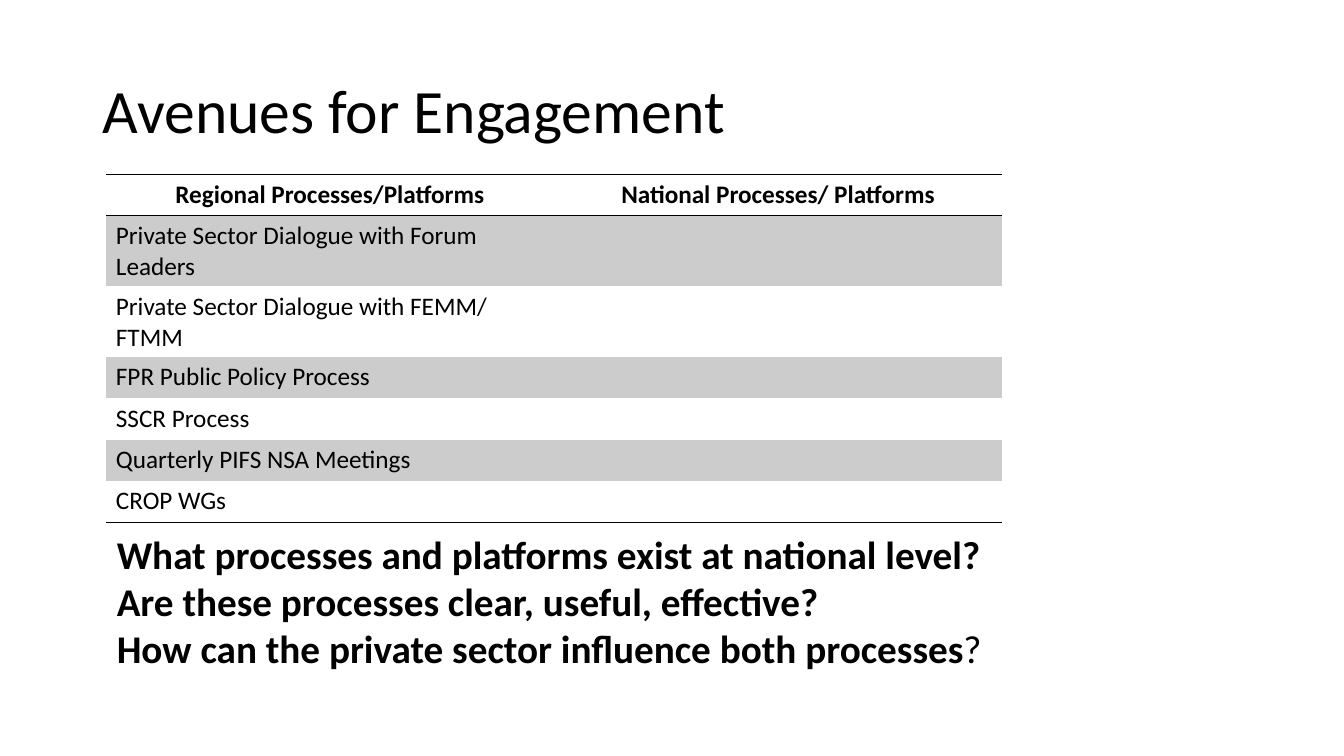
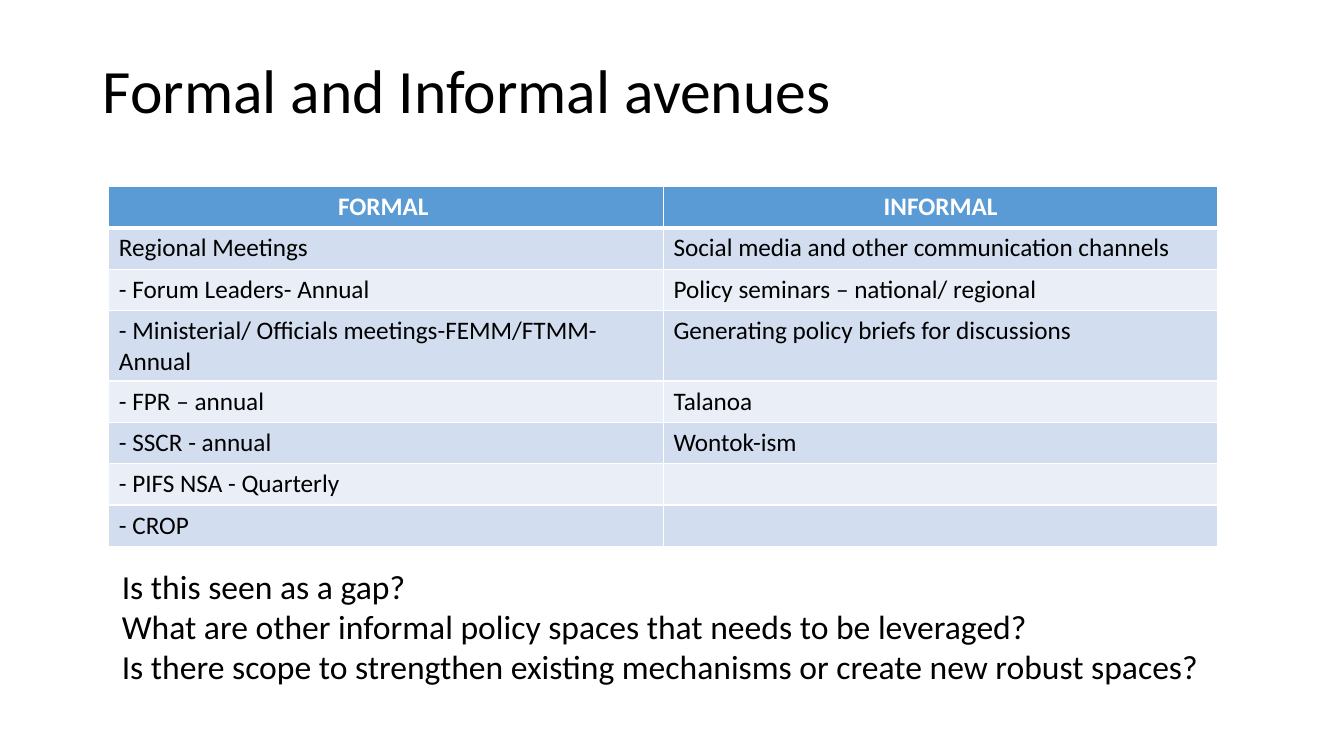
from lxml import etree
from pptx import Presentation
from pptx import util as u
from pptx.dml.color import RGBColor
from pptx.enum import text
from pptx.oxml import ns

COLOURS = {
    "ink": "000000",
    "paper": "FFFFFF",
    "grey": "CCCCCC",
    "blue": "5B9BD5",
    "blue band": "D2DEEF",
    "pale band": "EAEFF7",
}
FONT = "Calibri"
ROW_HEIGHT = 0.41


def colour(name):
    return RGBColor.from_string(COLOURS[name])


def write(paragraph, content, size=18, ink="ink", bold=False, align=None, spacing=None):
    """Add one formatted run to a paragraph."""
    run = paragraph.add_run()
    run.text = content
    run.font.name = FONT
    run.font.size = u.Pt(size)
    run.font.bold = bold
    run.font.color.rgb = colour(ink)
    if align is not None:
        paragraph.alignment = align
    if spacing is not None:
        paragraph.line_spacing = spacing


def set_border(cell, side, rule):
    """Draw a cell edge from (colour, points), or clear it when rule is None."""
    properties = cell._tc.get_or_add_tcPr()
    line = etree.SubElement(properties, ns.qn(f"a:ln{side}"))
    if rule is None:
        line.set("w", "0")
        etree.SubElement(line, ns.qn("a:noFill"))
        return
    name, width = rule
    line.set("w", str(u.Pt(width)))
    fill = etree.SubElement(line, ns.qn("a:solidFill"))
    etree.SubElement(fill, ns.qn("a:srgbClr")).set("val", COLOURS[name])


class Deck:
    def __init__(self):
        self.presentation = Presentation()
        self.presentation.slide_width = u.Inches(13.33)
        self.presentation.slide_height = u.Inches(7.5)
        self.slide = None

    def add_slide(self):
        self.slide = self.presentation.slides.add_slide(self.presentation.slide_layouts[6])

    def text_frame(self, left, top, width, height):
        box = self.slide.shapes.add_textbox(*map(u.Inches, (left, top, width, height)))
        box.text_frame.word_wrap = True
        return box.text_frame

    def title(self, content, top, height):
        frame = self.text_frame(0.92, top, 11.5, height)
        frame.vertical_anchor = text.MSO_ANCHOR.MIDDLE
        write(frame.paragraphs[0], content, size=44, spacing=0.9)

    def questions(self, lines, left, top, width, height, size):
        """Each line is a list of (text, bold) runs."""
        frame = self.text_frame(left, top, width, height)
        for index, runs in enumerate(lines):
            paragraph = frame.add_paragraph() if index else frame.paragraphs[0]
            for content, bold in runs:
                write(paragraph, content, size=size, bold=bold)

    def table(self, rows, left, top, width, header, bands, rules, divider=None):
        """header is (fill, ink); rules holds one horizontal edge more than there are rows."""
        columns = len(rows[0])
        frame = self.slide.shapes.add_table(
            len(rows), columns, u.Inches(left), u.Inches(top),
            u.Inches(width), u.Inches(ROW_HEIGHT * len(rows)))
        for row, values in enumerate(rows):
            is_header = row == 0
            fill, ink = header if is_header else (bands[(row - 1) % len(bands)], "ink")
            for column, value in enumerate(values):
                cell = frame.table.cell(row, column)
                edges = {"L": divider, "R": divider, "T": rules[row], "B": rules[row + 1]}
                for side, rule in edges.items():
                    set_border(cell, side, rule)
                cell.fill.solid()
                cell.fill.fore_color.rgb = colour(fill)
                if value:
                    write(cell.text_frame.paragraphs[0], value, ink=ink, bold=is_header,
                          align=text.PP_ALIGN.CENTER if is_header else None)


def engagement_slide(deck):
    deck.add_slide()
    deck.title("Avenues for Engagement", top=0.4, height=1.45)
    processes = [
        "Private Sector Dialogue with Forum Leaders",
        "Private Sector Dialogue with FEMM/ FTMM",
        "FPR Public Policy Process",
        "SSCR Process",
        "Quarterly PIFS NSA Meetings",
        "CROP WGs",
    ]
    rows = [("Regional Processes/Platforms", "National Processes/ Platforms")]
    rows += [(process, "") for process in processes]
    black = ("ink", 1)
    deck.table(rows, left=1.05, top=1.73, width=8.89,
               header=("paper", "ink"), bands=("grey", "paper"),
               rules=[black, black] + [None] * (len(rows) - 2) + [black])
    deck.questions([
        [("What processes and platforms exist at national level?", True)],
        [("Are these processes clear, useful, effective?", True)],
        [("How can the private sector influence both processes", True), ("?", False)],
    ], left=1.06, top=5.21, width=8.82, height=1.51, size=28)


def formality_slide(deck):
    deck.add_slide()
    deck.title("Formal and Informal avenues", top=0.3, height=1.25)
    rows = [
        ("FORMAL ", "INFORMAL"),
        ("Regional Meetings", "Social media and other communication channels"),
        ("- Forum Leaders- Annual", "Policy seminars – national/ regional"),
        ("- Ministerial/ Officials meetings-FEMM/FTMM- Annual",
         "Generating policy briefs for discussions"),
        ("- FPR – annual", "Talanoa"),
        ("- SSCR - annual", "Wontok-ism"),
        ("- PIFS NSA - Quarterly", ""),
        ("- CROP", ""),
    ]
    white = ("paper", 1)
    deck.table(rows, left=1.08, top=1.85, width=11,
               header=("blue", "paper"), bands=("blue band", "pale band"),
               rules=[white, ("paper", 3)] + [white] * (len(rows) - 1), divider=white)
    deck.questions([
        [("Is this seen as a gap?", False)],
        [("What are other informal policy spaces that needs to be leveraged?", False)],
        [("Is there scope to strengthen existing mechanisms or create new robust spaces?", False)],
    ], left=1.11, top=5.56, width=10.93, height=1.31, size=24)


def main():
    deck = Deck()
    engagement_slide(deck)
    formality_slide(deck)
    deck.presentation.save("out.pptx")


if __name__ == "__main__":
    main()
